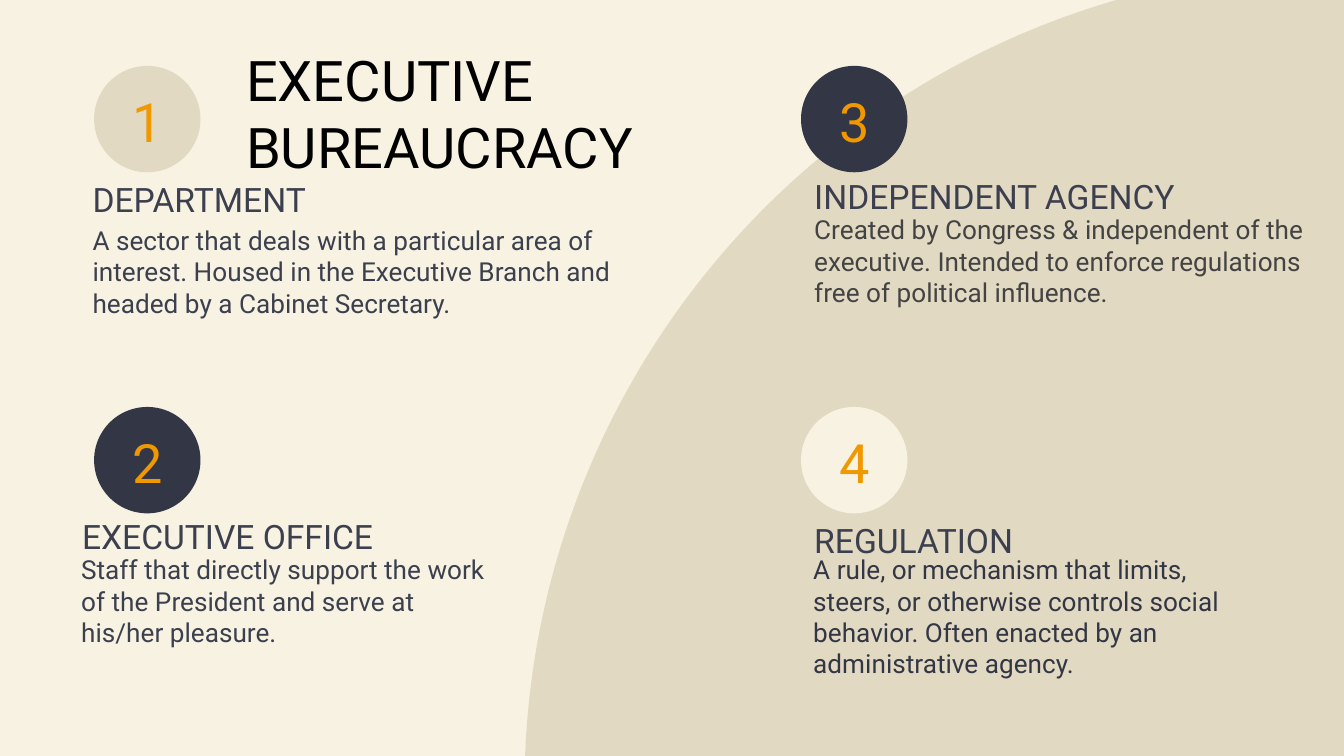
"""Build the Executive Bureaucracy slide: four numbered terms over a quarter disc."""
from typing import NamedTuple

from pptx import Presentation
from pptx import util as u
from pptx.dml.color import RGBColor
from pptx.enum import shapes, text

CREAM = RGBColor(0xF7, 0xF2, 0xE2)
SAND = RGBColor(0xE2, 0xD9, 0xC3)
NAVY = RGBColor(0x33, 0x36, 0x44)
SLATE = RGBColor(0x3C, 0x3F, 0x4E)
GRAY = RGBColor(0x43, 0x43, 0x43)
ORANGE = RGBColor(0xF0, 0x98, 0x00)
BLACK = RGBColor(0, 0, 0)

FONT = "Roboto"
INSET = 7.2
DISC_SIZE = 57
DISC_LEFTS = (50.4, 429.1)
DISC_TOPS = (35.3, 218)


class Box(NamedTuple):
    left: float
    top: float
    width: float
    height: float


class Style(NamedTuple):
    size: float
    color: RGBColor
    align: text.PP_ALIGN = text.PP_ALIGN.LEFT
    anchor: text.MSO_ANCHOR = text.MSO_ANCHOR.TOP


class Term(NamedTuple):
    number: int
    disc_color: RGBColor
    heading: str
    heading_box: Box
    meaning: str
    meaning_box: Box
    meaning_color: RGBColor


NUMBER_STYLE = Style(29, ORANGE, text.PP_ALIGN.CENTER, text.MSO_ANCHOR.MIDDLE)
HEADING_STYLE = Style(18, SLATE, anchor=text.MSO_ANCHOR.BOTTOM)

TERMS = [
    Term(1, SAND, "DEPARTMENT", Box(42.5, 87.8, 229, 36.7),
         "A sector that deals with a particular area of interest. "
         "Housed in the Executive Branch and headed by a Cabinet Secretary.",
         Box(42.5, 113, 301.7, 49), SLATE),
    Term(2, NAVY, "EXECUTIVE OFFICE", Box(36.9, 268.6, 229, 36.7),
         "Staff that directly support the work of the President "
         "and serve at his/her pleasure.",
         Box(36.4, 289.4, 236.2, 65.5), SLATE),
    Term(3, NAVY, "INDEPENDENT AGENCY", Box(429.1, 86.4, 229, 36.7),
         "Created by Congress & independent of the executive. "
         "Intended to enforce regulations free of political influence.",
         Box(429.1, 107.3, 277.2, 103), GRAY),
    Term(4, CREAM, "REGULATION", Box(429.1, 270.7, 229, 36.7),
         "A rule, or mechanism that limits, steers, or otherwise controls "
         "social behavior. Often enacted by an administrative agency.",
         Box(428.6, 289.4, 259.2, 77.8), NAVY),
]


def place(shape, box: Box) -> None:
    """Set the position and size of a shape in points."""
    shape.left, shape.top, shape.width, shape.height = map(u.Pt, box)


def write(shape, words: str, style: Style) -> None:
    """Format a text shape and add its single run."""
    frame = shape.text_frame
    frame.word_wrap = True
    frame.auto_size = text.MSO_AUTO_SIZE.NONE
    frame.vertical_anchor = style.anchor
    frame.margin_left = frame.margin_right = u.Pt(INSET)
    frame.margin_top = frame.margin_bottom = u.Pt(INSET)
    paragraph = frame.paragraphs[0]
    paragraph.alignment = style.align
    run = paragraph.add_run()
    run.text = words
    run.font.name = FONT
    run.font.size = u.Pt(style.size)
    run.font.color.rgb = style.color


def add_label(slide, words: str, box: Box, style: Style) -> None:
    """Add a text box holding one run."""
    write(slide.shapes.add_textbox(*map(u.Pt, box)), words, style)


def add_filled(slide, kind: shapes.MSO_SHAPE, box: Box, color: RGBColor):
    """Add a plain filled shape without outline or shadow."""
    shape = slide.shapes.add_shape(kind, *map(u.Pt, box))
    shape.shadow.inherit = False
    shape.fill.solid()
    shape.fill.fore_color.rgb = color
    shape.line.fill.background()
    return shape


def add_term(slide, term: Term) -> None:
    """Add a numbered disc with its heading and meaning."""
    column, row = divmod(term.number - 1, 2)
    left, top = DISC_LEFTS[column], DISC_TOPS[row]
    add_filled(slide, shapes.MSO_SHAPE.OVAL,
               Box(left, top, DISC_SIZE, DISC_SIZE), term.disc_color)
    add_label(slide, str(term.number), Box(left + 0.4, top + 7, DISC_SIZE, 45.4),
              NUMBER_STYLE)
    add_label(slide, term.meaning, term.meaning_box, Style(14, term.meaning_color))
    add_label(slide, term.heading, term.heading_box, HEADING_STYLE)


def main() -> None:
    """Create and save the presentation."""
    deck = Presentation()
    deck.slide_width, deck.slide_height = u.Pt(720), u.Pt(405)
    slide = deck.slides.add_slide(deck.slide_layouts[5])
    slide.background.fill.solid()
    slide.background.fill.fore_color.rgb = CREAM

    quarter_disc = add_filled(slide, shapes.MSO_SHAPE.PIE,
                              Box(281, -17.3, 878.4, 878.4), SAND)
    quarter_disc.adjustments[0] = 108
    quarter_disc.adjustments[1] = 162

    title = slide.shapes.title
    place(title, Box(124.6, 17.3, 316.8, 51.1))
    write(title, "EXECUTIVE BUREAUCRACY", Style(30, BLACK))

    for term in TERMS:
        add_term(slide, term)
    deck.save("out.pptx")


if __name__ == "__main__":
    main()
